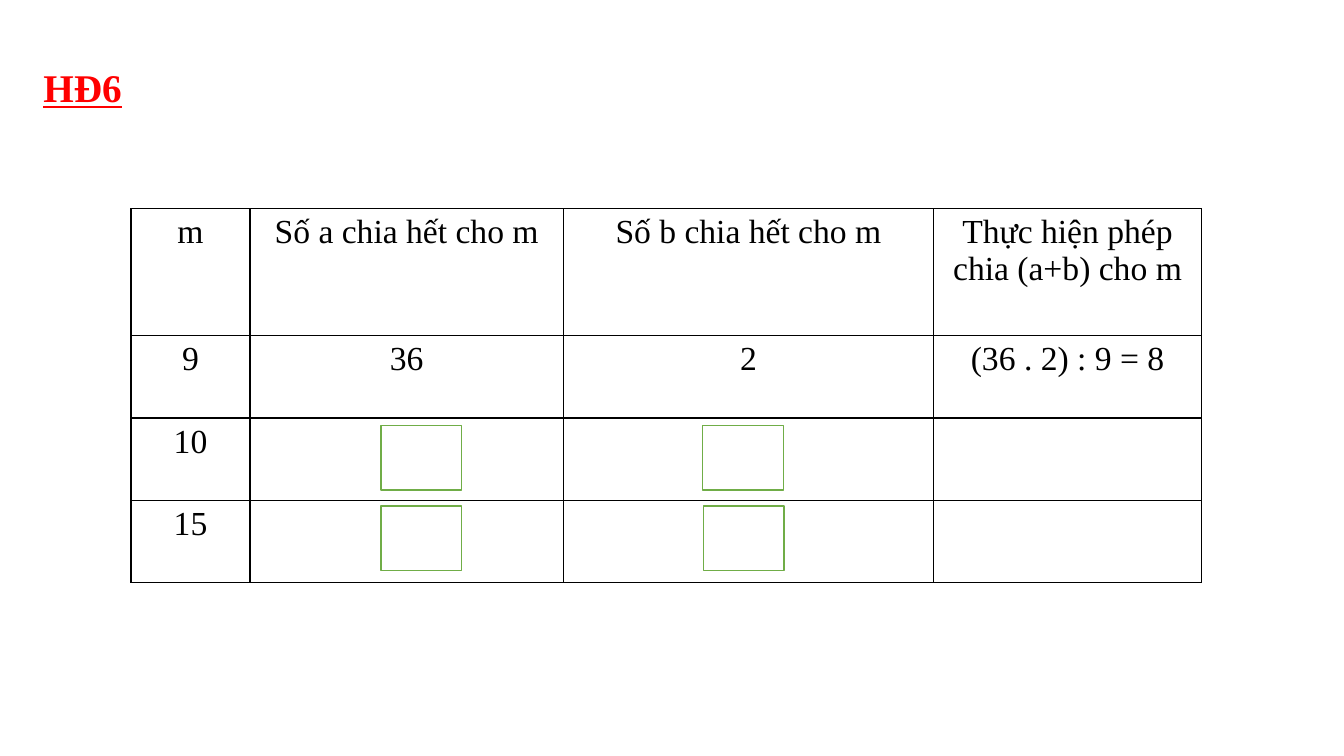
"""Build the HĐ6 divisibility exercise slide."""
from dataclasses import dataclass

from lxml import etree
from pptx import Presentation
from pptx.dml.color import RGBColor
from pptx.enum.shapes import MSO_SHAPE
from pptx.enum.text import MSO_ANCHOR, PP_ALIGN
from pptx.oxml.ns import qn
from pptx.slide import Slide
from pptx.table import _Cell
from pptx.text.text import _Paragraph
from pptx.util import Inches, Pt

RECTANGLE = MSO_SHAPE.RECTANGLE
TOP = MSO_ANCHOR.TOP
CENTER, LEFT = PP_ALIGN.CENTER, PP_ALIGN.LEFT
TITLE_ONLY = 5
SLIDE_WIDTH, SLIDE_HEIGHT = Inches(13.33), Inches(7.5)


@dataclass(frozen=True)
class Theme:
    font: str = "Times New Roman"
    heading: str = "FF0000"
    ink: str = "000000"
    paper: str = "FFFFFF"
    answer: str = "70AD47"
    heading_size: int = 28
    body_size: int = 24
    line_width: int = 1


@dataclass(frozen=True)
class Area:
    """A rectangle in percent of the slide's width and height."""
    left: float
    top: float
    width: float
    height: float

    def emu(self) -> tuple[int, int, int, int]:
        return across(self.left), down(self.top), across(self.width), down(self.height)


THEME = Theme()
HEADING_AREA = Area(2.48, 7.73, 16.05, 7.6)
TABLE_AREA = Area(9.75, 27.6, 79.66, 49.5)
COLUMN_SHARES = (8.85, 23.33, 27.53, 19.95)
HEADER_SHARE = 16.8
EXERCISES = (
    ("m", "Số a chia hết cho m", "Số b chia hết cho m", "Thực hiện phép chia (a+b) cho m"),
    ("9", "36", "2", "(36 . 2) : 9 = 8"),
    ("10", "", "", ""),
    ("15", "", "", ""),
)
ROW_SHARE = (TABLE_AREA.height - HEADER_SHARE) / (len(EXERCISES) - 1)
ANSWER_ROWS = ((56.27, (52.28, 28.35)), (66.93, (52.35, 28.35)))
ANSWER_AREAS = [Area(left, top, 6, 8.53) for top, lefts in ANSWER_ROWS for left in lefts]


def across(percent: float) -> int:
    return round(SLIDE_WIDTH * percent / 100)


def down(percent: float) -> int:
    return round(SLIDE_HEIGHT * percent / 100)


def write(paragraph: _Paragraph, words: str, size: int, color: str,
          align: PP_ALIGN, emphasis: bool = False) -> None:
    paragraph.alignment = align
    run = paragraph.add_run()
    run.text = words
    run.font.name = THEME.font
    run.font.size = Pt(size)
    run.font.bold = emphasis
    run.font.underline = emphasis
    run.font.color.rgb = RGBColor.from_string(color)


def rule_cell(cell: _Cell) -> None:
    properties = cell._tc.get_or_add_tcPr()
    for side in ("lnL", "lnR", "lnT", "lnB"):
        border = etree.SubElement(properties, qn(f"a:{side}"), w=str(Pt(THEME.line_width)))
        ink = etree.SubElement(border, qn("a:solidFill"))
        etree.SubElement(ink, qn("a:srgbClr"), val=THEME.ink)
    cell.fill.solid()
    cell.fill.fore_color.rgb = RGBColor.from_string(THEME.paper)


def add_heading(slide: Slide, words: str) -> None:
    heading = slide.shapes.title
    heading.left, heading.top, heading.width, heading.height = HEADING_AREA.emu()
    heading.text_frame.vertical_anchor = TOP
    paragraph = heading.text_frame.paragraphs[0]
    paragraph.line_spacing = 1.0
    write(paragraph, words, THEME.heading_size, THEME.heading, LEFT, True)


def add_exercises(slide: Slide) -> None:
    exercises = slide.shapes.add_table(
        len(EXERCISES), len(COLUMN_SHARES), *TABLE_AREA.emu()).table
    exercises.first_row = exercises.horz_banding = False
    for column, share in zip(exercises.columns, COLUMN_SHARES):
        column.width = across(share)
    for index, (row, entries) in enumerate(zip(exercises.rows, EXERCISES)):
        row.height = down(ROW_SHARE if index else HEADER_SHARE)
        for cell, words in zip(row.cells, entries):
            rule_cell(cell)
            if words:
                write(cell.text_frame.paragraphs[0], words, THEME.body_size, THEME.ink, CENTER)


def add_answer(slide: Slide, area: Area) -> None:
    answer = slide.shapes.add_shape(RECTANGLE, *area.emu())
    answer.shadow.inherit = False
    answer.fill.solid()
    answer.fill.fore_color.rgb = RGBColor.from_string(THEME.paper)
    answer.line.color.rgb = RGBColor.from_string(THEME.answer)
    answer.line.width = Pt(THEME.line_width)


def main() -> None:
    deck = Presentation()
    deck.slide_width, deck.slide_height = SLIDE_WIDTH, SLIDE_HEIGHT
    slide = deck.slides.add_slide(deck.slide_layouts[TITLE_ONLY])
    add_heading(slide, "HĐ6")
    add_exercises(slide)
    for area in ANSWER_AREAS:
        add_answer(slide, area)
    deck.save("out.pptx")


if __name__ == "__main__":
    main()
